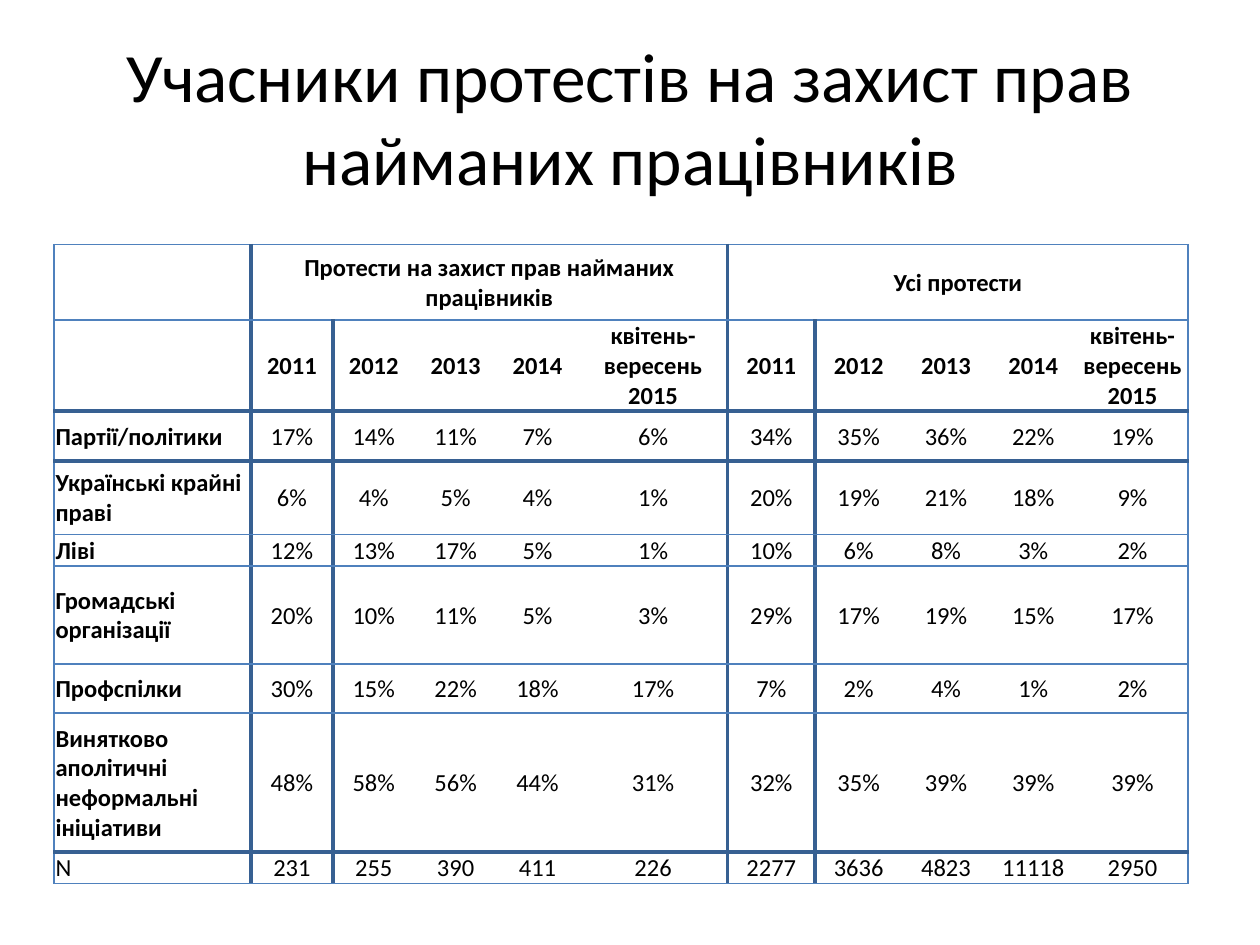
from dataclasses import dataclass

from lxml import etree
from pptx import Presentation
from pptx import util as u
from pptx.dml.color import RGBColor
from pptx.enum import text
from pptx.oxml.ns import qn


@dataclass(frozen=True)
class Theme:
    font: str = "Calibri"
    ink: str = "000000"
    paper: str = "FFFFFF"
    thin: tuple = ("4F81BD", 1)
    thick: tuple = ("376092", 2.25)
    title_size: float = 39.6
    table_size: float = 14


TITLE = "Учасники протестів на захист прав найманих працівників"
GROUPS = {1: "Протести на захист прав найманих працівників", 6: "Усі протести"}
PERIODS = ["2011", "2012", "2013", "2014", "квітень-вересень 2015"]
LABELS = ["Партії/політики", "Українські крайні праві", "Ліві", "Громадські організації",
          "Профспілки", "Винятково аполітичні неформальні ініціативи"]
SHARES = [
    [17, 14, 11, 7, 6, 34, 35, 36, 22, 19],
    [6, 4, 5, 4, 1, 20, 19, 21, 18, 9],
    [12, 13, 17, 5, 1, 10, 6, 8, 3, 2],
    [20, 10, 11, 5, 3, 29, 17, 19, 15, 17],
    [30, 15, 22, 18, 17, 7, 2, 4, 1, 2],
    [48, 58, 56, 44, 31, 32, 35, 39, 39, 39],
]
COUNTS = [231, 255, 390, 411, 226, 2277, 3636, 4823, 11118, 2950]

COLUMN_WIDTHS = [3.97] + [1.65] * 4 + [3.01] + [1.76] * 4 + [2.24]
ROW_HEIGHTS = [1.52, 1.52, 1.01, 1.48, 0.49, 1.98, 0.99, 2.8, 0.53]
GROUP_SPAN = len(PERIODS)
HEADER_ROWS = 2
THICK_ROW_EDGES = {2, 3, 8}
THICK_COLUMN_EDGES = {1, 6}
FIRST_YEAR_EDGES = {2, 7}


class SlideBuilder:
    def __init__(self, slide, theme):
        self.slide = slide
        self.theme = theme

    def style(self, paragraph, size, alignment, bold=False):
        paragraph.alignment = alignment
        font = paragraph.font
        font.name, font.size, font.bold = self.theme.font, u.Pt(size), bold
        font.color.rgb = RGBColor.from_string(self.theme.ink)

    def title(self, words, left, top, width, height):
        shape = self.slide.shapes.title
        shape.left, shape.top, shape.width, shape.height = map(u.Cm, (left, top, width, height))
        frame = shape.text_frame
        frame.text = words
        frame.auto_size = text.MSO_AUTO_SIZE.NONE
        frame.vertical_anchor = text.MSO_ANCHOR.MIDDLE
        self.style(frame.paragraphs[0], self.theme.title_size, text.PP_ALIGN.CENTER)

    def table(self, rows, left, top):
        table = self.slide.shapes.add_table(
            len(rows), len(COLUMN_WIDTHS), u.Cm(left), u.Cm(top),
            u.Cm(sum(COLUMN_WIDTHS)), u.Cm(sum(ROW_HEIGHTS))).table
        table.first_row = table.horz_banding = False
        for column, width in zip(table.columns, COLUMN_WIDTHS):
            column.width = u.Cm(width)
        for row, height in zip(table.rows, ROW_HEIGHTS):
            row.height = u.Cm(height)
        for start in GROUPS:
            table.cell(0, start).merge(table.cell(0, start + GROUP_SPAN - 1))
        for r, values in enumerate(rows):
            for c, value in enumerate(values):
                self.cell(table.cell(r, c), value, r, c)

    def cell(self, cell, value, row, column):
        cell.margin_left = cell.margin_right = cell.margin_top = u.Cm(0.03)
        cell.margin_bottom = 0
        cell.vertical_anchor = text.MSO_ANCHOR.MIDDLE
        cell.fill.solid()
        cell.fill.fore_color.rgb = RGBColor.from_string(self.theme.paper)
        cell.text = value
        is_label = column == 0 and row >= HEADER_ROWS
        self.style(cell.text_frame.paragraphs[0], self.theme.table_size,
                   text.PP_ALIGN.LEFT if is_label else text.PP_ALIGN.CENTER,
                   bold=row < HEADER_ROWS or value in LABELS)
        right = column + (cell.span_width if cell.is_merge_origin else 1)
        self.borders(cell, L=self.column_edge(row, column), R=self.column_edge(row, right),
                     T=self.row_edge(row), B=self.row_edge(row + 1))

    def row_edge(self, edge):
        return self.theme.thick if edge in THICK_ROW_EDGES else self.theme.thin

    def column_edge(self, row, edge):
        """Line at a column edge; the group header has none between its years."""
        if edge in THICK_COLUMN_EDGES or (row > 0 and edge in FIRST_YEAR_EDGES):
            return self.theme.thick
        return self.theme.thin if edge in (0, len(COLUMN_WIDTHS)) else None

    def borders(self, cell, **sides):
        properties = cell._tc.get_or_add_tcPr()
        for position, (side, line) in enumerate(sides.items()):
            element = etree.Element(qn(f"a:ln{side}"))
            if line:
                color, width = line
                element.set("w", str(u.Pt(width)))
                fill = etree.SubElement(element, qn("a:solidFill"))
                etree.SubElement(fill, qn("a:srgbClr"), val=color)
            else:
                etree.SubElement(element, qn("a:noFill"))
            properties.insert(position, element)


def table_rows():
    groups = [GROUPS.get(column, "") for column in range(len(COLUMN_WIDTHS))]
    shares = [[label] + [f"{share}%" for share in row] for label, row in zip(LABELS, SHARES)]
    return [groups, [""] + PERIODS * len(GROUPS), *shares, ["N"] + [str(n) for n in COUNTS]]


def main():
    presentation = Presentation()
    presentation.slide_width, presentation.slide_height = u.Cm(25.4), u.Cm(19.05)
    slide = presentation.slides.add_slide(presentation.slide_layouts[5])
    builder = SlideBuilder(slide, Theme())
    builder.title(TITLE, 1.27, 0.76, 22.86, 3.18)
    builder.table(table_rows(), 1.09, 4.93)
    presentation.save("out.pptx")


if __name__ == "__main__":
    main()
